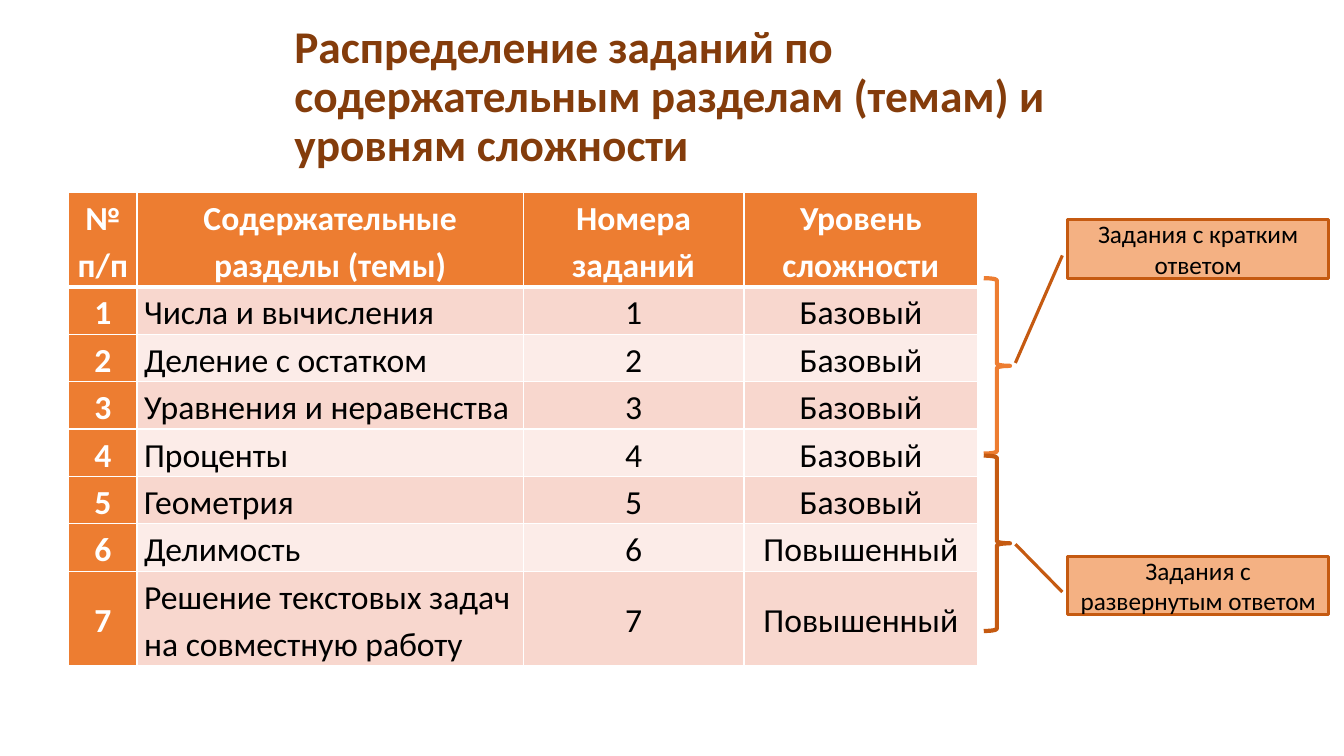
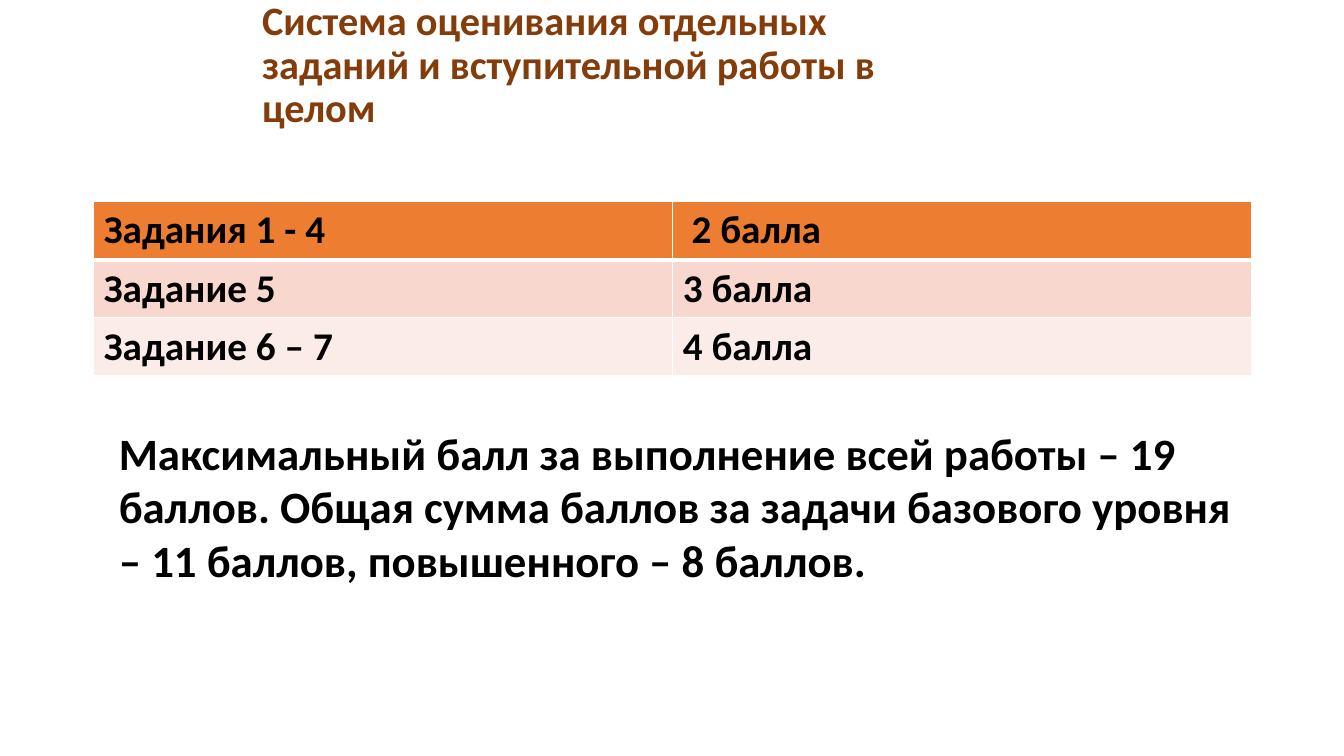
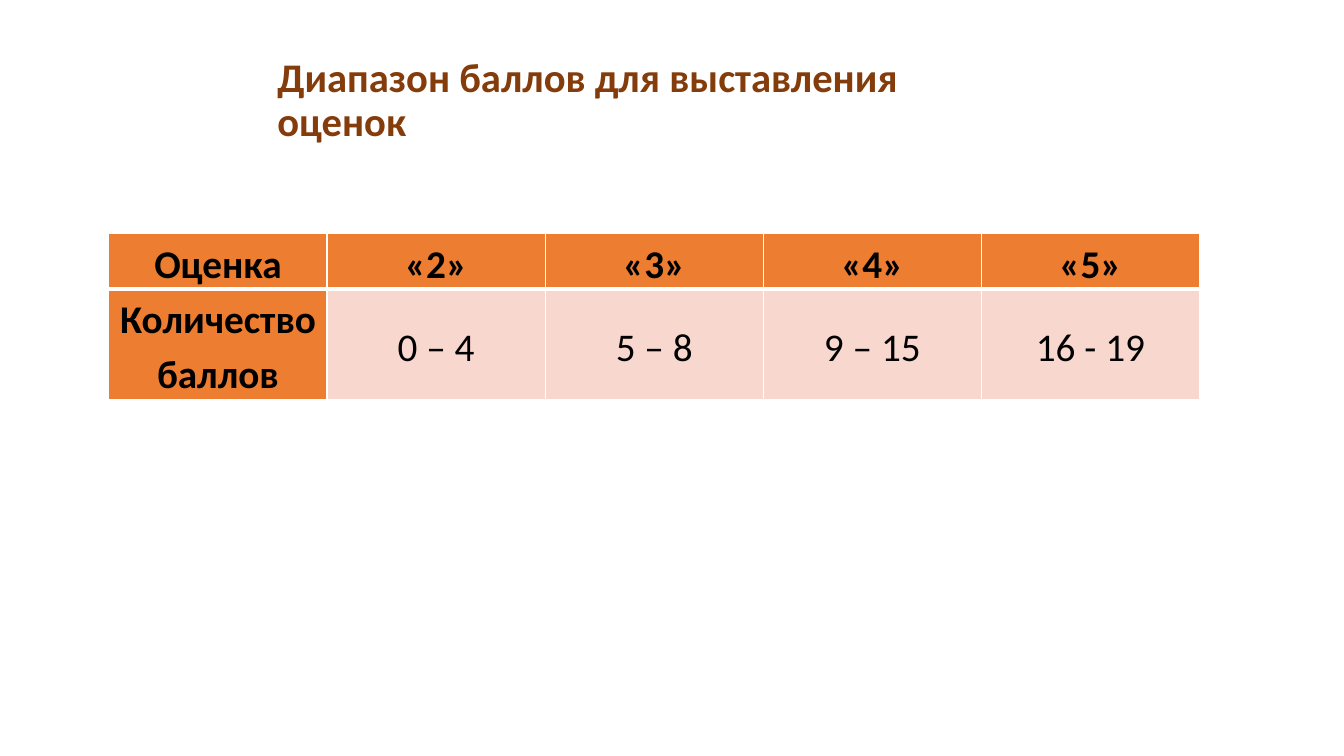
from dataclasses import dataclass

from lxml import etree
from pptx import Presentation
from pptx import util as u
from pptx.dml.color import RGBColor
from pptx.enum import shapes, text
from pptx.oxml.ns import qn

WIDTH = u.Inches(13.33)
HEIGHT = u.Inches(7.5)
FONT = "Calibri"
BROWN = "843C0B"
ORANGE = "ED7D31"
DARK_ORANGE = "C55A11"
PEACH = "F4B183"
BANDS = ("F8D7CE", "FCECE8")
BLACK = "000000"
WHITE = "FFFFFF"
LEFT = text.PP_ALIGN.LEFT
CENTER = text.PP_ALIGN.CENTER
MIDDLE = text.MSO_ANCHOR.MIDDLE


@dataclass
class TableStyle:
    size: int
    header_color: str = BLACK
    label_column: bool = False
    bold_body: bool = False
    left_columns: tuple = ()
    compact: bool = True


def across(percent):
    return round(WIDTH * percent / 100)


def down(percent):
    return round(HEIGHT * percent / 100)


def box(left, top, width, height):
    return across(left), down(top), across(width), down(height)


def color(value):
    return RGBColor.from_string(value)


def write(frame, content, size, ink=BLACK, bold=False, align=LEFT):
    paragraph = frame.paragraphs[0]
    paragraph.alignment = align
    run = paragraph.add_run()
    run.text = content
    run.font.name = FONT
    run.font.size = u.Pt(size)
    run.font.bold = bold
    run.font.color.rgb = color(ink)
    return paragraph


def add_titled_slide(presentation, content, size, area, bottom_margin=0.67):
    slide = presentation.slides.add_slide(presentation.slide_layouts[5])
    title = slide.shapes.title
    title.left, title.top, title.width, title.height = box(*area)
    frame = title.text_frame
    frame.auto_size = text.MSO_AUTO_SIZE.NONE
    frame.word_wrap = True
    frame.vertical_anchor = MIDDLE
    frame.margin_bottom = down(bottom_margin)
    write(frame, content, size, BROWN, True).line_spacing = 0.9
    return slide


def set_borders(cell, row_index):
    properties = cell._tc.get_or_add_tcPr()
    widths = {
        "a:lnL": 1,
        "a:lnR": 1,
        "a:lnT": 3 if row_index == 1 else 1,
        "a:lnB": 3 if row_index == 0 else 1,
    }
    for tag, width in widths.items():
        line = etree.SubElement(properties, qn(tag), w=str(u.Pt(width)))
        fill = etree.SubElement(line, qn("a:solidFill"))
        etree.SubElement(fill, qn("a:srgbClr"), val=WHITE)


def format_cell(cell, content, row_index, column_index, style):
    is_label = style.label_column and column_index == 0
    is_heading = row_index == 0 or is_label
    set_borders(cell, row_index)
    cell.fill.solid()
    cell.fill.fore_color.rgb = color(ORANGE if is_heading else BANDS[(row_index - 1) % 2])
    is_left = column_index in style.left_columns and (row_index > 0 or not style.compact)
    paragraph = write(
        cell.text_frame,
        content,
        style.size,
        style.header_color if is_heading else BLACK,
        is_heading or style.bold_body,
        LEFT if is_left else CENTER,
    )
    if style.compact:
        cell.vertical_anchor = MIDDLE
        cell.margin_left = cell.margin_right = u.Inches(0.07)
        cell.margin_top = cell.margin_bottom = 0
        paragraph.line_spacing = 1.15
        paragraph.space_after = u.Pt(10)


def add_grid(slide, left, top, column_widths, row_heights, rows, style):
    area = box(left, top, sum(column_widths), sum(row_heights))
    table = slide.shapes.add_table(len(rows), len(column_widths), *area).table
    for column, width in zip(table.columns, column_widths):
        column.width = across(width)
    for row, height in zip(table.rows, row_heights):
        row.height = down(height)
    for row_index, values in enumerate(rows):
        for column_index, value in enumerate(values):
            cell = table.cell(row_index, column_index)
            format_cell(cell, value, row_index, column_index, style)


def add_outlined(slide, kind, area, line_color, line_width):
    shape = slide.shapes.add_shape(kind, *box(*area))
    shape.shadow.inherit = False
    shape.fill.background()
    shape.line.color.rgb = color(line_color)
    shape.line.width = u.Pt(line_width)
    return shape


def add_brace(slide, top, line_color):
    kind = shapes.MSO_SHAPE.RIGHT_BRACE
    add_outlined(slide, kind, (73.2, top, 1.95, 23.2), line_color, 3)


def add_callout(slide, top, content, target):
    kind = shapes.MSO_SHAPE.LINE_CALLOUT_1
    callout = add_outlined(slide, kind, (79.43, top, 19.43, 7.73), DARK_ORANGE, 2.25)
    callout.fill.solid()
    callout.fill.fore_color.rgb = color(PEACH)
    for index, value in enumerate((0.61, -0.02, *target)):
        callout.adjustments[index] = value
    frame = callout.text_frame
    frame.word_wrap = True
    frame.vertical_anchor = MIDDLE
    write(frame, content, 18, align=CENTER)


def add_note(slide, content, size, area):
    frame = slide.shapes.add_textbox(*box(*area)).text_frame
    frame.word_wrap = True
    frame.auto_size = text.MSO_AUTO_SIZE.SHAPE_TO_FIT_TEXT
    write(frame, content, size, bold=True)


def build_topics(presentation):
    slide = add_titled_slide(
        presentation,
        "Распределение заданий по содержательным разделам (темам) и уровням сложности",
        32.4,
        (21.15, 3.33, 57.68, 19.33),
    )
    topics = (
        ("Числа и вычисления", "Базовый"),
        ("Деление с остатком", "Базовый"),
        ("Уравнения и неравенства", "Базовый"),
        ("Проценты", "Базовый"),
        ("Геометрия", "Базовый"),
        ("Делимость", "Повышенный"),
        ("Решение текстовых задач на совместную работу", "Повышенный"),
    )
    rows = [("№ п/п", "Содержательные разделы (темы)", "Номера заданий", "Уровень сложности")]
    rows += [(str(n), topic, str(n), level) for n, (topic, level) in enumerate(topics, 1)]
    style = TableStyle(24, header_color=WHITE, label_column=True, left_columns=(1,))
    heights = [12.4] + [6.27] * 6 + [12.4]
    add_grid(slide, 5.1, 25.47, (5.1, 28.73, 16.43, 17.4), heights, rows, style)
    add_brace(slide, 36.8, ORANGE)
    add_brace(slide, 60.27, DARK_ORANGE)
    add_callout(slide, 73.6, "Задания с развернутым ответом", (-0.21, -0.2))
    add_callout(slide, 29.07, "Задания с кратким ответом", (2.45, -0.2))


def build_scoring(presentation):
    slide = add_titled_slide(
        presentation,
        "Система оценивания отдельных заданий и вступительной работы в целом",
        28.8,
        (18.75, 6.93, 54.38, 12.13),
        bottom_margin=9.2,
    )
    rows = (
        ("Задания 1 - 4", " 2 балла"),
        ("Задание 5", "3 балла"),
        ("Задание 6 – 7", "4 балла"),
    )
    style = TableStyle(28, bold_body=True, left_columns=(0, 1), compact=False)
    add_grid(slide, 6.98, 26.67, [43.08] * 2, [7.67] * 3, rows, style)
    add_note(
        slide,
        "Максимальный балл за выполнение всей работы – 19 баллов. Общая сумма баллов "
        "за задачи базового уровня – 11 баллов, повышенного – 8 баллов.",
        32,
        (8.1, 55.6, 84.45, 26.93),
    )


def build_grades(presentation):
    slide = add_titled_slide(
        presentation,
        "Диапазон баллов для выставления оценок",
        29,
        (19.88, 8.13, 55.5, 10.53),
    )
    rows = (
        ("Оценка", "«2»", "«3»", "«4»", "«5»"),
        ("Количество баллов", "0 – 4", "5 – 8", "9 – 15", "16 - 19"),
    )
    style = TableStyle(28, label_column=True)
    add_grid(slide, 8.1, 30.93, [16.23] * 5, (7.33, 14.53), rows, style)


def main():
    presentation = Presentation()
    presentation.slide_width = WIDTH
    presentation.slide_height = HEIGHT
    build_topics(presentation)
    build_scoring(presentation)
    build_grades(presentation)
    presentation.save("out.pptx")


if __name__ == "__main__":
    main()
